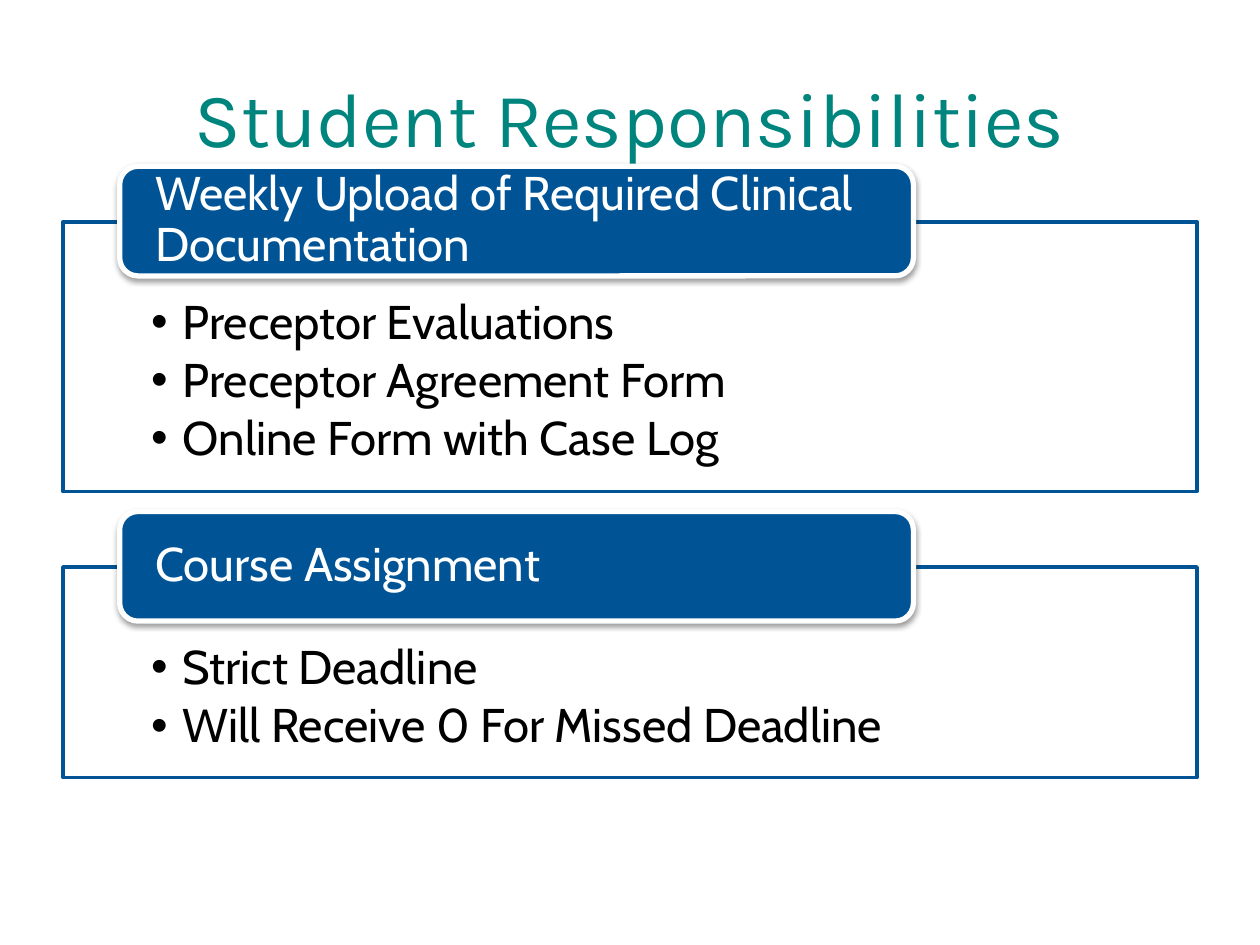
from lxml.etree import SubElement
from pptx import Presentation
from pptx.dml.color import RGBColor
from pptx.enum.shapes import MSO_SHAPE as Shape
from pptx.enum.text import MSO_ANCHOR as Anchor, MSO_AUTO_SIZE as AutoSize, PP_ALIGN as Align
from pptx.oxml.ns import qn
from pptx.util import Inches, Pt

TEAL = RGBColor(0x00, 0x85, 0x7E)
BLUE = RGBColor(0x00, 0x54, 0x96)
WHITE = RGBColor(0xFF, 0xFF, 0xFF)
BLACK = RGBColor(0x00, 0x00, 0x00)

LEFT, WIDTH = 0.5, 9
BANNER_INDENT, BANNER_RISE = 0.45, 0.44

# heading, list items, panel top, panel height
SECTIONS = [
    ("Weekly Upload of Required Clinical Documentation",
     ["Preceptor Evaluations", "Preceptor Agreement Form", "Online Form with Case Log"],
     1.76, 2.14),
    ("Course Assignment",
     ["Strict Deadline", "Will Receive 0 For Missed Deadline"],
     4.5, 1.67),
]


def place(shape, left, top, width, height):
    shape.left, shape.top = Inches(left), Inches(top)
    shape.width, shape.height = Inches(width), Inches(height)


def set_frame(frame, anchor, margins):
    """Margins are left and right, top, bottom, in inches."""
    side, top, bottom = (Inches(margin) for margin in margins)
    frame.word_wrap = True
    frame.auto_size = AutoSize.NONE
    frame.vertical_anchor = anchor
    frame.margin_left = frame.margin_right = side
    frame.margin_top, frame.margin_bottom = top, bottom


def set_font(para, name, size, color):
    for span in para.runs:
        span.font.name = name
        span.font.size = Pt(size)
        span.font.color.rgb = color


def paint(shape, fill, line, line_width):
    shape.fill.solid()
    shape.fill.fore_color.rgb = fill
    shape.line.color.rgb = line
    shape.line.width = Pt(line_width)


def add_bullet(para):
    properties = para._p.get_or_add_pPr()
    properties.set("marL", str(Inches(0.25)))
    properties.set("indent", str(-Inches(0.25)))
    SubElement(properties, qn("a:buChar"), char="•")


def add_drop_shadow(shape):
    shape.shadow.inherit = False
    effects = shape._element.spPr.find(qn("a:effectLst"))
    shadow = SubElement(effects, qn("a:outerShdw"), blurRad=str(Pt(3.1)),
                        dist=str(Pt(1.6)), dir="5400000", rotWithShape="0")
    color = SubElement(shadow, qn("a:srgbClr"), val=str(BLACK))
    SubElement(color, qn("a:alpha"), val="38000")


def fill_title(title):
    place(title, LEFT, 0.3, WIDTH, 1.25)
    title.text_frame.text = "Student Responsibilities"
    title.text_frame.vertical_anchor = Anchor.MIDDLE
    para = title.text_frame.paragraphs[0]
    para.alignment = Align.CENTER
    set_font(para, "Karla", 44, TEAL)


def fill_panel(panel, items, top, height):
    """Turn a body placeholder into an outlined bullet list."""
    place(panel, LEFT, top, WIDTH, height)
    paint(panel, WHITE, BLUE, 2)
    frame = panel.text_frame
    set_frame(frame, Anchor.TOP, (0.7, 0.61, 0.21))
    frame.text = "\n".join(items)
    for para in frame.paragraphs:
        para.line_spacing = 0.9
        para.space_before = Pt(0)
        para.space_after = Pt(4)
        add_bullet(para)
        set_font(para, "Cabin", 27, BLACK)


def add_banner(slide, heading, panel_top):
    banner = slide.shapes.add_shape(
        Shape.ROUNDED_RECTANGLE, Inches(LEFT + BANNER_INDENT),
        Inches(panel_top - BANNER_RISE), Inches(6.3), Inches(0.87))
    paint(banner, BLUE, WHITE, 3)
    add_drop_shadow(banner)
    set_frame(banner.text_frame, Anchor.MIDDLE, (0.24, 0, 0))
    banner.text_frame.text = heading
    para = banner.text_frame.paragraphs[0]
    para.alignment = Align.LEFT
    para.line_spacing = 0.9
    set_font(para, "Cabin", 27, WHITE)


def main():
    deck = Presentation()
    deck.slide_width, deck.slide_height = Inches(10), Inches(7.5)
    two_content = deck.slide_layouts[3]
    slide = deck.slides.add_slide(two_content)
    title, *panels = slide.placeholders
    fill_title(title)
    for panel, (heading, items, top, height) in zip(panels, SECTIONS):
        fill_panel(panel, items, top, height)
        add_banner(slide, heading, top)
    deck.save("out.pptx")


if __name__ == "__main__":
    main()
